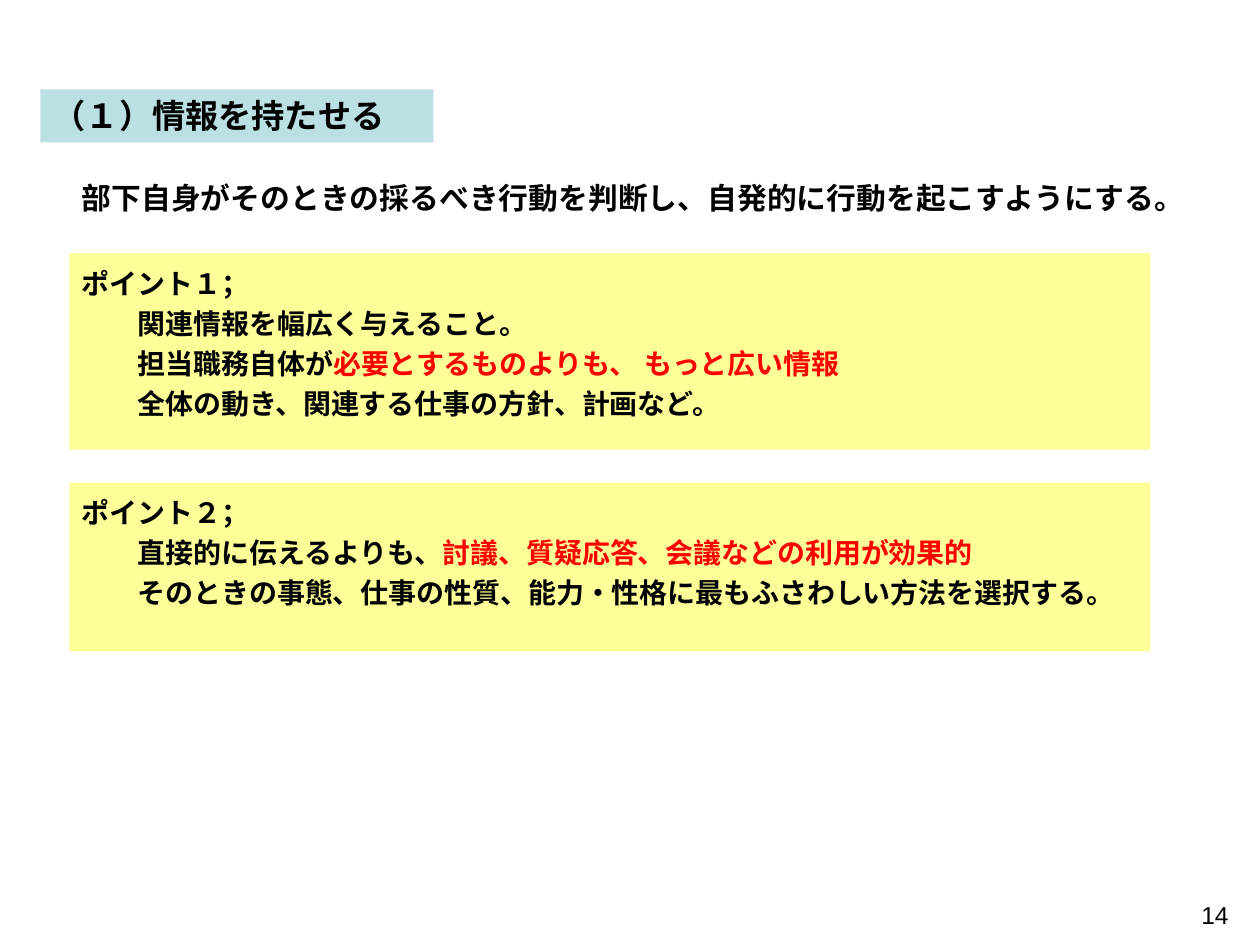
from dataclasses import dataclass

from pptx import Presentation
from pptx.dml.color import RGBColor
from pptx.enum import shapes, text
from pptx.util import Inches, Pt


@dataclass(frozen=True)
class Theme:
    font: str = "Arial"
    ink: str = "000000"
    accent: str = "FF0000"
    heading_fill: str = "BBE0E3"
    point_fill: str = "FFFF99"
    heading_size: int = 19
    lead_size: int = 17
    point_size: int = 16
    number_size: int = 14


THEME = Theme()

# A line is a list of (words, is emphasised) pairs.
HEADING = [("（１）情報を持たせる", False)]
LEAD = [("部下自身がそのときの採るべき行動を判断し、自発的に行動を起こすようにする。", False)]
PAGE_NUMBER = [("14", False)]
POINTS = [
    {
        "title": "ポイント１；",
        "height": 1.56,
        "lines": [
            [("関連情報を幅広く与えること。", False)],
            [("担当職務自体が", False), ("必要とするものよりも、 もっと広い情報", True)],
            [("全体の動き、関連する仕事の方針、計画など。", False)],
        ],
    },
    {
        "title": "ポイント２；",
        "height": 1.34,
        "lines": [
            [("直接的に伝えるよりも、", False), ("討議、質疑応答、会議などの利用が効果的", True)],
            [("そのときの事態、仕事の性質、能力・性格に最もふさわしい方法を選択する。", False)],
        ],
    },
]

BODY_LEFT = 0.55
POINT_TOP, POINT_WIDTH, POINT_GAP = 2.01, 8.58, 0.26
LINE_SPACING = 1.2
LINE_INDENT = Pt(2 * THEME.point_size)  # two full-width characters


def add_panel(slide, box, fill=None):
    """Add a filled rectangle, or a plain text box when there is no fill."""
    box = [Inches(length) for length in box]
    if fill is None:
        panel = slide.shapes.add_textbox(*box)
    else:
        panel = slide.shapes.add_shape(shapes.MSO_SHAPE.RECTANGLE, *box)
        panel.shadow.inherit = False
        panel.fill.solid()
        panel.fill.fore_color.rgb = RGBColor.from_string(fill)
        panel.line.fill.background()
    frame = panel.text_frame
    frame.word_wrap = True
    frame.vertical_anchor = text.MSO_ANCHOR.TOP
    return frame


def write_line(paragraph, line, size, bold=True, align=text.PP_ALIGN.LEFT):
    paragraph.alignment = align
    for words, emphasised in line:
        run = paragraph.add_run()
        run.text = words
        run.font.name = THEME.font
        run.font.size = Pt(size)
        run.font.bold = bold
        run.font.color.rgb = RGBColor.from_string(THEME.accent if emphasised else THEME.ink)


def add_point(slide, point, top):
    frame = add_panel(slide, (BODY_LEFT, top, POINT_WIDTH, point["height"]), THEME.point_fill)
    title = frame.paragraphs[0]
    title.line_spacing = LINE_SPACING
    write_line(title, [(point["title"], False)], THEME.point_size)
    for line in point["lines"]:
        paragraph = frame.add_paragraph()
        paragraph.line_spacing = LINE_SPACING
        properties = paragraph._p.get_or_add_pPr()
        properties.set("marL", str(LINE_INDENT))
        properties.set("indent", "0")
        write_line(paragraph, line, THEME.point_size)


def main():
    deck = Presentation()
    deck.slide_width, deck.slide_height = Inches(10), Inches(7.5)
    slide = deck.slides.add_slide(deck.slide_layouts[6])

    number = add_panel(slide, (7.52, 7.06, 2.33, 0.29))
    number.margin_top, number.margin_bottom = Inches(0.08), 0
    write_line(number.paragraphs[0], PAGE_NUMBER, THEME.number_size,
               bold=False, align=text.PP_ALIGN.RIGHT)

    heading = add_panel(slide, (0.32, 0.71, 3.12, 0.42), THEME.heading_fill)
    write_line(heading.paragraphs[0], HEADING, THEME.heading_size)

    lead = add_panel(slide, (BODY_LEFT, 1.38, 9.17, 0.39))
    write_line(lead.paragraphs[0], LEAD, THEME.lead_size)

    top = POINT_TOP
    for point in POINTS:
        add_point(slide, point, top)
        top += point["height"] + POINT_GAP

    deck.save("out.pptx")


if __name__ == "__main__":
    main()
